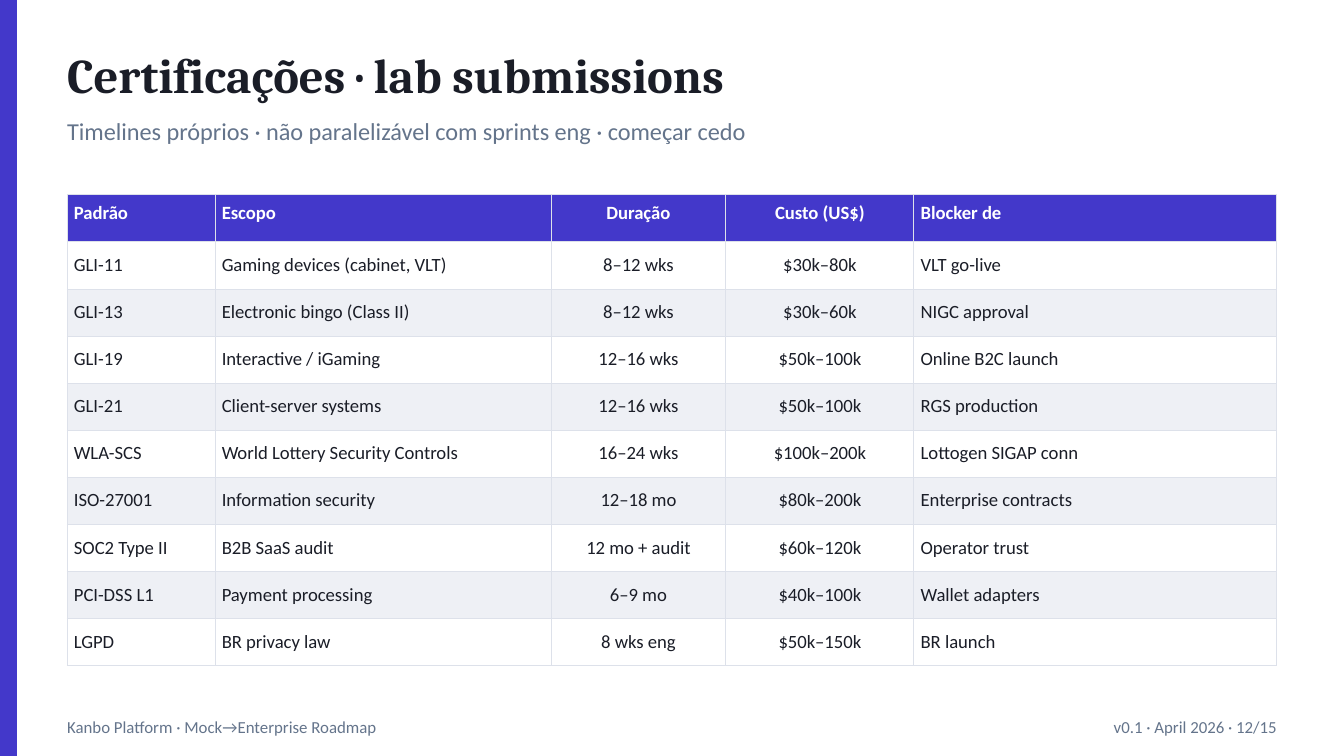
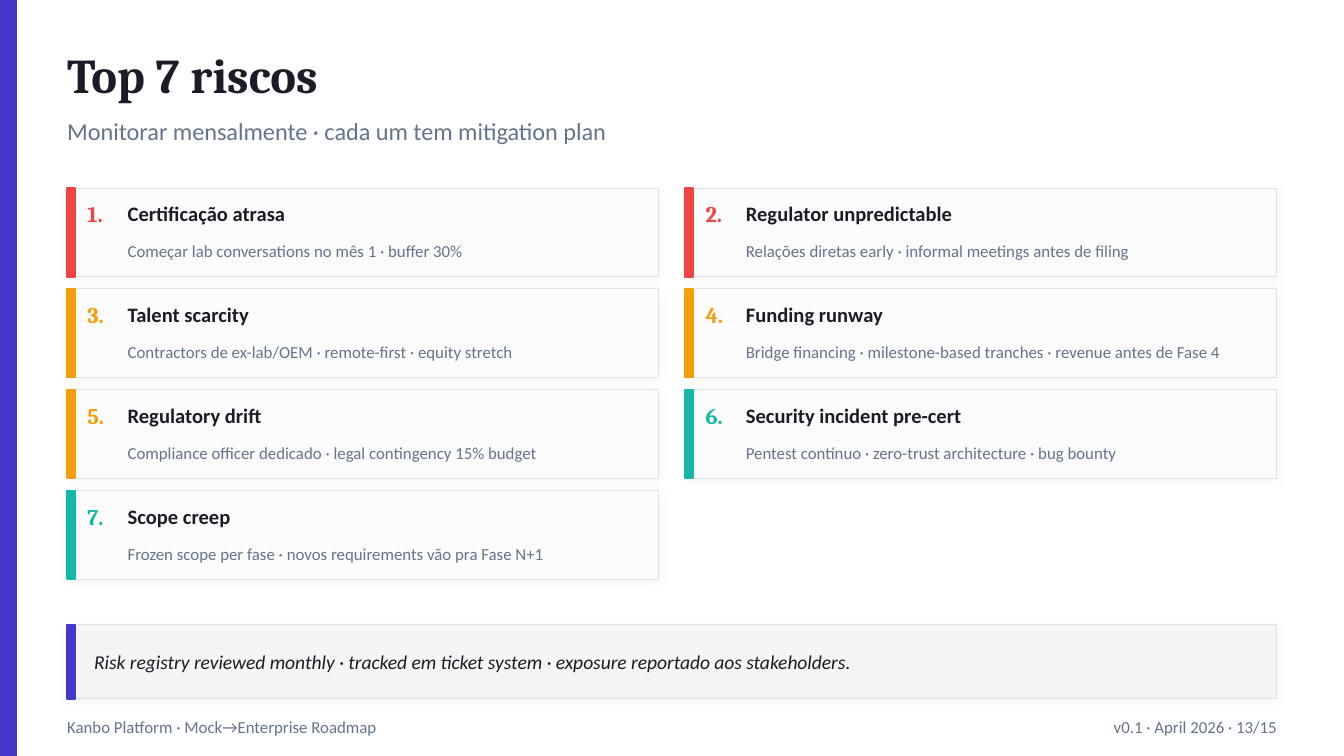
from pptx import Presentation
from pptx.dml.color import RGBColor
from pptx.enum.shapes import MSO_SHAPE
from pptx.enum.text import MSO_ANCHOR, MSO_AUTO_SIZE, PP_ALIGN
from pptx.oxml import parse_xml
from pptx.oxml.ns import nsdecls, qn
from pptx.util import Emu, Pt

RECTANGLE = MSO_SHAPE.RECTANGLE
LEFT, CENTER, RIGHT = PP_ALIGN.LEFT, PP_ALIGN.CENTER, PP_ALIGN.RIGHT
TOP, MIDDLE = MSO_ANCHOR.TOP, MSO_ANCHOR.MIDDLE
TITLE_ONLY = 5

SCALE = 4572  # EMU per px, 200 px to the inch
SLIDE_WIDTH, SLIDE_HEIGHT = 2000, 1125
MARGIN = 100
CONTENT_WIDTH = SLIDE_WIDTH - 2 * MARGIN
PAGE_COUNT = 15

SANS, SERIF = "Calibri", "Cambria"
COLORS = {
    "accent": "4338CA",
    "ink": "1A1D27",
    "muted": "64748B",
    "white": "FFFFFF",
    "stripe": "EEF0F5",
    "border": "DDE1EA",
    "card": "FBFBFB",
    "note": "F5F5F5",
    "high": "EF4444",
    "medium": "F59E0B",
    "low": "14B8A6",
}

CERTIFICATION_COLUMNS = [
    ("Padrão", 220, LEFT),
    ("Escopo", 500, LEFT),
    ("Duração", 260, CENTER),
    ("Custo (US$)", 280, CENTER),
    ("Blocker de", 540, LEFT),
]
CERTIFICATIONS = [
    ("GLI-11", "Gaming devices (cabinet, VLT)", "8–12 wks", "$30k–80k", "VLT go-live"),
    ("GLI-13", "Electronic bingo (Class II)", "8–12 wks", "$30k–60k", "NIGC approval"),
    ("GLI-19", "Interactive / iGaming", "12–16 wks", "$50k–100k", "Online B2C launch"),
    ("GLI-21", "Client-server systems", "12–16 wks", "$50k–100k", "RGS production"),
    ("WLA-SCS", "World Lottery Security Controls", "16–24 wks", "$100k–200k",
     "Lottogen SIGAP conn"),
    ("ISO-27001", "Information security", "12–18 mo", "$80k–200k", "Enterprise contracts"),
    ("SOC2 Type II", "B2B SaaS audit", "12 mo + audit", "$60k–120k", "Operator trust"),
    ("PCI-DSS L1", "Payment processing", "6–9 mo", "$40k–100k", "Wallet adapters"),
    ("LGPD", "BR privacy law", "8 wks eng", "$50k–150k", "BR launch"),
]
RISKS = [
    ("high", "Certificação atrasa", "Começar lab conversations no mês 1 · buffer 30%"),
    ("high", "Regulator unpredictable",
     "Relações diretas early · informal meetings antes de filing"),
    ("medium", "Talent scarcity", "Contractors de ex-lab/OEM · remote-first · equity stretch"),
    ("medium", "Funding runway",
     "Bridge financing · milestone-based tranches · revenue antes de Fase 4"),
    ("medium", "Regulatory drift",
     "Compliance officer dedicado · legal contingency 15% budget"),
    ("low", "Security incident pre-cert",
     "Pentest contínuo · zero-trust architecture · bug bounty"),
    ("low", "Scope creep", "Frozen scope per fase · novos requirements vão pra Fase N+1"),
]


def px(length):
    return Emu(length * SCALE)


def rgb(name):
    return RGBColor.from_string(COLORS[name])


def write(text_frame, text, size, color, font=SANS, bold=False, italic=False,
          align=LEFT, anchor=MIDDLE, inset=0):
    """Fill a text frame with one paragraph in one style."""
    text_frame.text = text
    text_frame.word_wrap = True
    text_frame.vertical_anchor = anchor
    text_frame.margin_left = text_frame.margin_right = px(inset)
    text_frame.margin_top = text_frame.margin_bottom = px(inset)
    paragraph = text_frame.paragraphs[0]
    paragraph.alignment = align
    run_font = paragraph.runs[0].font
    run_font.name, run_font.size = font, Pt(size)
    run_font.bold, run_font.italic = bold, italic
    run_font.color.rgb = rgb(color)


def add_text(slide, box, text, size, color, **style):
    textbox = slide.shapes.add_textbox(*map(px, box))
    write(textbox.text_frame, text, size, color, **style)


def add_rectangle(slide, box, fill, line, line_width=1):
    shape = slide.shapes.add_shape(RECTANGLE, *map(px, box))
    shape.fill.solid()
    shape.fill.fore_color.rgb = rgb(fill)
    shape.line.color.rgb = rgb(line)
    shape.line.width = Pt(line_width)
    shape.shadow.inherit = False
    return shape


def add_panel(slide, box, fill, accent):
    """Bordered panel with a soft shadow and a coloured left edge."""
    left, top, _, height = box
    panel = add_rectangle(slide, box, fill, "border", 0.5)
    panel._element.spPr.find(qn("a:effectLst")).append(parse_xml(
        f'<a:outerShdw {nsdecls("a")} blurRad="{Pt(6)}" dist="{Pt(1)}" dir="5400000" '
        'algn="bl" rotWithShape="0"><a:srgbClr val="000000"><a:alpha val="4000"/>'
        '</a:srgbClr></a:outerShdw>'))
    add_rectangle(slide, (left, top, 12, height), accent, accent)


def add_base_slide(presentation, title, subtitle, page):
    """Slide with the side band, title, subtitle and footer."""
    slide = presentation.slides.add_slide(presentation.slide_layouts[TITLE_ONLY])
    add_rectangle(slide, (0, 0, 24, SLIDE_HEIGHT), "accent", "accent")
    heading = slide.shapes.title
    heading.left, heading.top = px(MARGIN), px(56)
    heading.width, heading.height = px(CONTENT_WIDTH), px(110)
    write(heading.text_frame, title, 26, "ink", font=SERIF, bold=True)
    heading.text_frame.auto_size = MSO_AUTO_SIZE.NONE
    add_text(slide, (MARGIN, 164, CONTENT_WIDTH, 60), subtitle, 13, "muted")
    add_text(slide, (MARGIN, 1056, 1200, 50),
             "Kanbo Platform · Mock→Enterprise Roadmap", 9, "muted")
    add_text(slide, (1300, 1056, 600, 50),
             f"v0.1 · April 2026 · {page}/{PAGE_COUNT}", 9, "muted", align=RIGHT)
    return slide


def set_cell_borders(cell):
    properties = cell._tc.get_or_add_tcPr()
    for index, side in enumerate(("lnL", "lnR", "lnT", "lnB")):
        properties.insert(index, parse_xml(
            f'<a:{side} {nsdecls("a")} w="{Pt(0.5)}"><a:solidFill>'
            f'<a:srgbClr val="{COLORS["border"]}"/></a:solidFill></a:{side}>'))


def add_certification_table(slide, left, top, row_height):
    headers, widths, alignments = zip(*CERTIFICATION_COLUMNS)
    rows = [headers, *CERTIFICATIONS]
    table = slide.shapes.add_table(
        len(rows), len(headers), px(left), px(top),
        px(sum(widths)), px(row_height * len(rows))).table
    table.horz_banding = False
    for column, width in zip(table.columns, widths):
        column.width = px(width)
    for row_index, values in enumerate(rows):
        is_header = row_index == 0
        if is_header:
            fill, color, anchor = "accent", "white", TOP
        else:
            fill = "white" if row_index % 2 else "stripe"
            color, anchor = "ink", MIDDLE
        for column_index, value in enumerate(values):
            cell = table.cell(row_index, column_index)
            cell.fill.solid()
            cell.fill.fore_color.rgb = rgb(fill)
            set_cell_borders(cell)
            cell.vertical_anchor = anchor
            cell.margin_left = cell.margin_right = px(10)
            cell.margin_top = cell.margin_bottom = px(10)
            cell.text = value
            paragraph = cell.text_frame.paragraphs[0]
            paragraph.alignment = alignments[column_index]
            font = paragraph.runs[0].font
            font.name, font.size, font.bold = SANS, Pt(10), is_header
            font.color.rgb = rgb(color)


def add_risk_card(slide, box, number, level, name, mitigation):
    left, top, width, _ = box
    text_width = width - 100
    add_panel(slide, box, "card", level)
    add_text(slide, (left + 30, top + 10, 60, 56), f"{number}.", 12, level,
             font=SERIF, bold=True)
    add_text(slide, (left + 90, top + 10, text_width, 56), name, 11, "ink", bold=True)
    add_text(slide, (left + 90, top + 64, text_width, 60), mitigation, 9, "muted")


def add_risk_grid(slide, left, top):
    width, height, column_gap, row_gap = 880, 132, 40, 18
    for index, risk in enumerate(RISKS):
        row, column = divmod(index, 2)
        box = (left + column * (width + column_gap),
               top + row * (height + row_gap), width, height)
        add_risk_card(slide, box, index + 1, *risk)


def add_note(slide, box, text):
    left, top, width, height = box
    add_panel(slide, box, "note", "accent")
    add_text(slide, (left + 40, top, width - 40, height), text, 10.5, "ink", italic=True)


def build_certifications(presentation):
    slide = add_base_slide(
        presentation, "Certificações · lab submissions",
        "Timelines próprios · não paralelizável com sprints eng · começar cedo", 12)
    add_certification_table(slide, MARGIN, 290, 70)


def build_risks(presentation):
    slide = add_base_slide(
        presentation, "Top 7 riscos",
        "Monitorar mensalmente · cada um tem mitigation plan", 13)
    add_risk_grid(slide, MARGIN, 280)
    add_note(slide, (MARGIN, 930, CONTENT_WIDTH, 110),
             "Risk registry reviewed monthly · tracked em ticket system · "
             "exposure reportado aos stakeholders.")


def main():
    presentation = Presentation()
    presentation.slide_width = px(SLIDE_WIDTH)
    presentation.slide_height = px(SLIDE_HEIGHT)
    build_certifications(presentation)
    build_risks(presentation)
    presentation.save("out.pptx")


if __name__ == "__main__":
    main()
